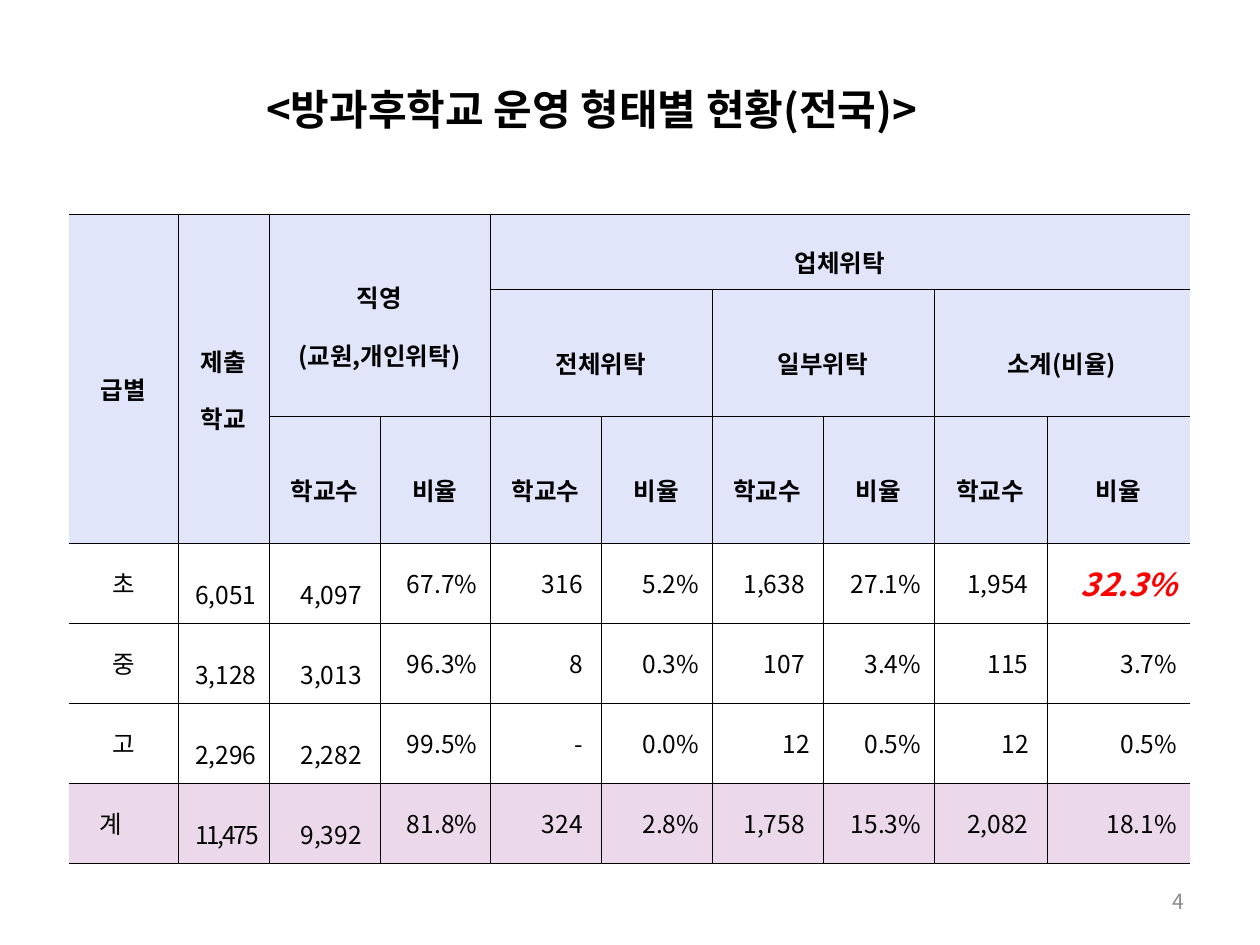
from pptx import Presentation
from pptx.dml.color import RGBColor
from pptx.enum.text import MSO_ANCHOR, PP_ALIGN
from pptx.oxml.ns import qn
from pptx.util import Pt
from lxml import etree

PX = 914400 // 126
FONT = "Noto Sans CJK KR"
BLACK = RGBColor(0, 0, 0)
RED = RGBColor(255, 0, 0)
GRAY = RGBColor(0x8C, 0x8C, 0x8C)
BLUE = RGBColor(0xE0, 0xE5, 0xFA)
PINK = RGBColor(0xEC, 0xD8, 0xEB)
LEFT, MID, RIGHT = PP_ALIGN.LEFT, PP_ALIGN.CENTER, PP_ALIGN.RIGHT
MIDDLE = MSO_ANCHOR.MIDDLE

TITLE = " <방과후학교 운영 형태별 현황(전국)>"
PAGE = "4"
# row, column, rows spanned, columns spanned, text
HEADS = [
    (0, 0, 3, 1, "급별"),
    (0, 1, 3, 1, "제출\n학교"),
    (0, 2, 2, 2, "직영\n(교원,개인위탁)"),
    (0, 4, 1, 6, "업체위탁"),
    (1, 4, 1, 2, "전체위탁"),
    (1, 6, 1, 2, "일부위탁"),
    (1, 8, 1, 2, "소계(비율)"),
] + [(2, c, 1, 1, ("학교수", "비율")[c % 2]) for c in range(2, 10)]
DATA = [
    ["초", "6,051 ", "4,097 ", "67.7%", "316 ", "5.2%", "1,638 ", "27.1%", "1,954 ", "32.3%"],
    ["중", "3,128 ", "3,013 ", "96.3%", "8 ", "0.3%", "107 ", "3.4%", "115 ", "3.7%"],
    ["고", "2,296 ", "2,282 ", "99.5%", "- ", "0.0%", "12", "0.5%", "12 ", "0.5%"],
    ["계　", "11,475 ", "9,392 ", "81.8%", "324 ", "2.8%", "1,758 ", "15.3%", "2,082 ", "18.1%"],
]
HEAD_ROWS = 3
COLS = [109, 91, 111, 110] + [111] * 4 + [113, 143]
ROWS = [75, 127, 127] + [80] * len(DATA)
TOTAL = len(ROWS) - 1


def write(frame, text, align, size=14, color=BLACK, bold=False, lead=None):
    frame.text = text
    for para in frame.paragraphs:
        para.alignment = align
        if lead:
            para.line_spacing = lead
        for run in para.runs:
            font = run.font
            font.name, font.size, font.bold = FONT, Pt(size), bold
            font.color.rgb = color
            etree.SubElement(run._r.rPr, qn("a:ea"), typeface=FONT)


def rule(cell, sides):
    """Draw hairlines on the given sides (L, R, T, B) and none on the others."""
    props = cell._tc.get_or_add_tcPr()
    for i, side in enumerate("LRTB"):
        line = etree.Element(qn("a:ln" + side), w=str(Pt(0.28)))
        if side in sides:
            fill = etree.SubElement(line, qn("a:solidFill"))
            etree.SubElement(fill, qn("a:srgbClr"), val=str(BLACK))
        else:
            etree.SubElement(line, qn("a:noFill"))
        props.insert(i, line)


def place(shape, *box):
    shape.left, shape.top, shape.width, shape.height = [n * PX for n in box]


def style(table):
    table.first_row = table.horz_banding = False
    for col, width in zip(table.columns, COLS):
        col.width = width * PX
    for row, height in zip(table.rows, ROWS):
        row.height = height * PX
    spans = {(r, c): across for r, c, _, across, _ in HEADS}
    for r in range(len(ROWS)):
        for c in range(len(COLS)):
            cell = table.cell(r, c)
            cell.vertical_anchor = MIDDLE
            if r < HEAD_ROWS or r == TOTAL:
                cell.fill.solid()
                cell.fill.fore_color.rgb = PINK if r == TOTAL else BLUE
            else:
                cell.fill.background()
            end = c + spans.get((r, c), 1)
            rule(cell, "TB" + ("L" if c else "") + ("R" if end < len(COLS) else ""))


def fill_in(table):
    for r, c, down, across, text in HEADS:
        cell = table.cell(r, c)
        if down * across > 1:
            cell.merge(table.cell(r + down - 1, c + across - 1))
        write(cell.text_frame, text, MID, bold=True, lead=1.6)
    for r, row in enumerate(DATA, HEAD_ROWS):
        for c, text in enumerate(row):
            write(table.cell(r, c).text_frame, text, RIGHT if c else MID,
                  lead=1.6 if c in (1, 2) else None)
    peak = table.cell(HEAD_ROWS, len(COLS) - 1).text_frame
    write(peak, DATA[0][-1], RIGHT, 18, RED, True)
    peak.paragraphs[0].runs[0].font.italic = True
    total = table.cell(TOTAL, 1).text_frame.paragraphs[0].runs[0]
    total._r.rPr.set("spc", "-130")


def main():
    prs = Presentation()
    prs.slide_width, prs.slide_height = 1260 * PX, 945 * PX
    slide = prs.slides.add_slide(prs.slide_layouts[5])
    shapes = slide.shapes

    page = shapes.add_textbox(903 * PX, 876 * PX, 294 * PX, 50 * PX)
    page.text_frame.word_wrap = True
    page.text_frame.vertical_anchor = MIDDLE
    write(page.text_frame, PAGE, RIGHT, 12, GRAY)

    table = shapes.add_table(len(ROWS), len(COLS), 69 * PX, 214 * PX,
                             sum(COLS) * PX, sum(ROWS) * PX).table
    style(table)
    fill_in(table)

    title = shapes.title
    place(title, 244, 77, 771, 63)
    title.text_frame.vertical_anchor = MIDDLE
    write(title.text_frame, TITLE, LEFT, 24, bold=True)
    title.text_frame.paragraphs[0].runs[0]._r.rPr.set("kern", "0")
    prs.save("out.pptx")


if __name__ == "__main__":
    main()
